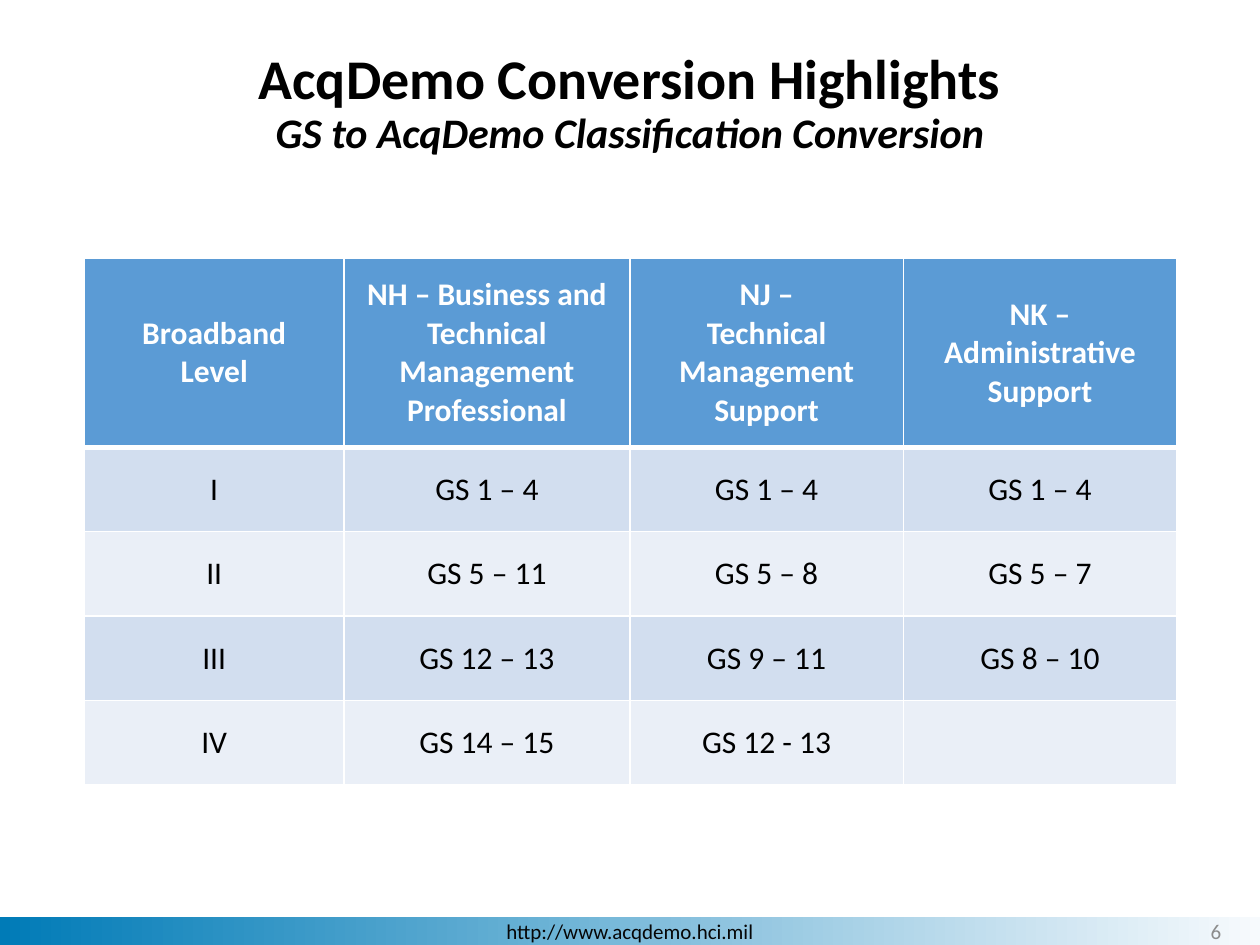
from lxml import etree
from pptx import Presentation
from pptx import util as u
from pptx.dml.color import RGBColor
from pptx.enum import shapes, text
from pptx.oxml import ns

BLACK = RGBColor(0x00, 0x00, 0x00)
WHITE = RGBColor(0xFF, 0xFF, 0xFF)
GRAY = RGBColor(0x8C, 0x8C, 0x8C)
FOOTER_TEXT = RGBColor(0x06, 0x06, 0x06)
FOOTER_PALE = RGBColor(0xF7, 0xFA, 0xFD)
FOOTER_BLUE = RGBColor(0x00, 0x7B, 0xB7)
HEADER_BLUE = RGBColor(0x5B, 0x9B, 0xD5)
BANDS = (RGBColor(0xD2, 0xDE, 0xEF), RGBColor(0xEA, 0xEF, 0xF7))

CENTER, RIGHT = text.PP_ALIGN.CENTER, text.PP_ALIGN.RIGHT
TOP, MIDDLE, BOTTOM = (text.MSO_ANCHOR.TOP, text.MSO_ANCHOR.MIDDLE,
                       text.MSO_ANCHOR.BOTTOM)

COLUMN_WIDTHS = (2.06, 2.27, 2.17, 2.17)
ROW_HEIGHTS = (1.5, 0.67, 0.67, 0.67, 0.67)
# Each header is a list of paragraphs; "\n" is a line break within one
HEADERS = (
    ["Broadband", "Level"],
    ["NH – Business and Technical Management Professional"],
    ["NJ –\nTechnical Management Support"],
    ["NK –\nAdministrative Support"],
)
LEVELS = (
    ("I", "GS 1 – 4", "GS 1 – 4", "GS 1 – 4"),
    ("II", "GS 5 – 11", "GS 5 – 8", "GS 5 – 7"),
    ("III", "GS 12 – 13", "GS 9 – 11", "GS 8 – 10"),
    ("IV", "GS 14 – 15", "GS 12 - 13", ""),
)


class SlideBuilder:
    font_name = "Calibri"

    def __init__(self, slide):
        self.slide = slide

    def add_lines(self, frame, lines, align=CENTER, spacing=None):
        """Fill a frame with (text, size, color, bold, italic) paragraphs."""
        for index, (content, size, color, bold, italic) in enumerate(lines):
            paragraph = frame.paragraphs[0] if index == 0 else frame.add_paragraph()
            paragraph.alignment = align
            if spacing:
                paragraph.line_spacing = spacing
            for part_index, part in enumerate(content.split("\n")):
                if part_index:
                    paragraph.add_line_break()
                if not part:
                    continue
                run = paragraph.add_run()
                run.text = part
                run.font.name = self.font_name
                run.font.size = u.Pt(size)
                run.font.bold = bold
                run.font.italic = italic
                run.font.color.rgb = color

    def text_box(self, box, lines, align=CENTER, anchor=TOP, spacing=None):
        shape = self.slide.shapes.add_textbox(*map(u.Inches, box))
        frame = shape.text_frame
        frame.word_wrap = True
        frame.vertical_anchor = anchor
        self.add_lines(frame, lines, align, spacing)

    def gradient_bar(self, box, colors, angle, lines):
        shape = self.slide.shapes.add_shape(
            shapes.MSO_SHAPE.RECTANGLE, *map(u.Inches, box))
        shape.shadow.inherit = False
        shape.line.fill.background()
        shape.fill.gradient()
        shape.fill.gradient_angle = angle
        for stop, color in zip(shape.fill.gradient_stops, colors):
            stop.color.rgb = color
        shape.text_frame.vertical_anchor = MIDDLE
        self.add_lines(shape.text_frame, lines)

    def border(self, cell, side, width):
        properties = cell._tc.get_or_add_tcPr()
        line = etree.SubElement(properties, ns.qn(f"a:ln{side}"),
                                w=str(u.Pt(width)))
        fill = etree.SubElement(line, ns.qn("a:solidFill"))
        etree.SubElement(fill, ns.qn("a:srgbClr"), val=str(WHITE))

    def cell(self, cell, lines, fill, top=1, bottom=1):
        for side, width in (("L", 1), ("R", 1), ("T", top), ("B", bottom)):
            self.border(cell, side, width)
        cell.fill.solid()
        cell.fill.fore_color.rgb = fill
        cell.vertical_anchor = MIDDLE
        self.add_lines(cell.text_frame, lines)

    def table(self, left, top, headers, rows):
        table = self.slide.shapes.add_table(
            len(ROW_HEIGHTS), len(COLUMN_WIDTHS), u.Inches(left), u.Inches(top),
            u.Inches(sum(COLUMN_WIDTHS)), u.Inches(sum(ROW_HEIGHTS))).table
        for column, width in zip(table.columns, COLUMN_WIDTHS):
            column.width = u.Inches(width)
        for row, height in zip(table.rows, ROW_HEIGHTS):
            row.height = u.Inches(height)
        for column, header in enumerate(headers):
            lines = [(line, 18, WHITE, True, False) for line in header]
            self.cell(table.cell(0, column), lines, HEADER_BLUE, bottom=3)
        for row, values in enumerate(rows, 1):
            for column, value in enumerate(values):
                self.cell(table.cell(row, column),
                          [(value, 18, BLACK, False, False)],
                          BANDS[(row - 1) % 2], top=3 if row == 1 else 1)


def main():
    presentation = Presentation()
    presentation.slide_width = u.Inches(10)
    presentation.slide_height = u.Inches(7.5)
    builder = SlideBuilder(
        presentation.slides.add_slide(presentation.slide_layouts[6]))

    # Footer bar
    builder.gradient_bar(
        (0, 7.28, 10, 0.22), (FOOTER_PALE, FOOTER_BLUE), 180,
        [("http://www.acqdemo.hci.mil", 12, FOOTER_TEXT, False, False)])

    # Classification table
    builder.table(0.67, 2.05, HEADERS, LEVELS)

    # Title and subtitle
    builder.text_box(
        (0, 0.36, 10, 1.04),
        [("AcqDemo Conversion Highlights", 32, BLACK, True, False),
         ("GS to AcqDemo Classification Conversion", 24, BLACK, True, True)],
        spacing=0.9)

    # Slide number
    builder.text_box((7.54, 7.14, 2.25, 0.4),
                     [("6", 12, GRAY, False, False)], RIGHT, BOTTOM)

    presentation.save("out.pptx")


if __name__ == "__main__":
    main()
